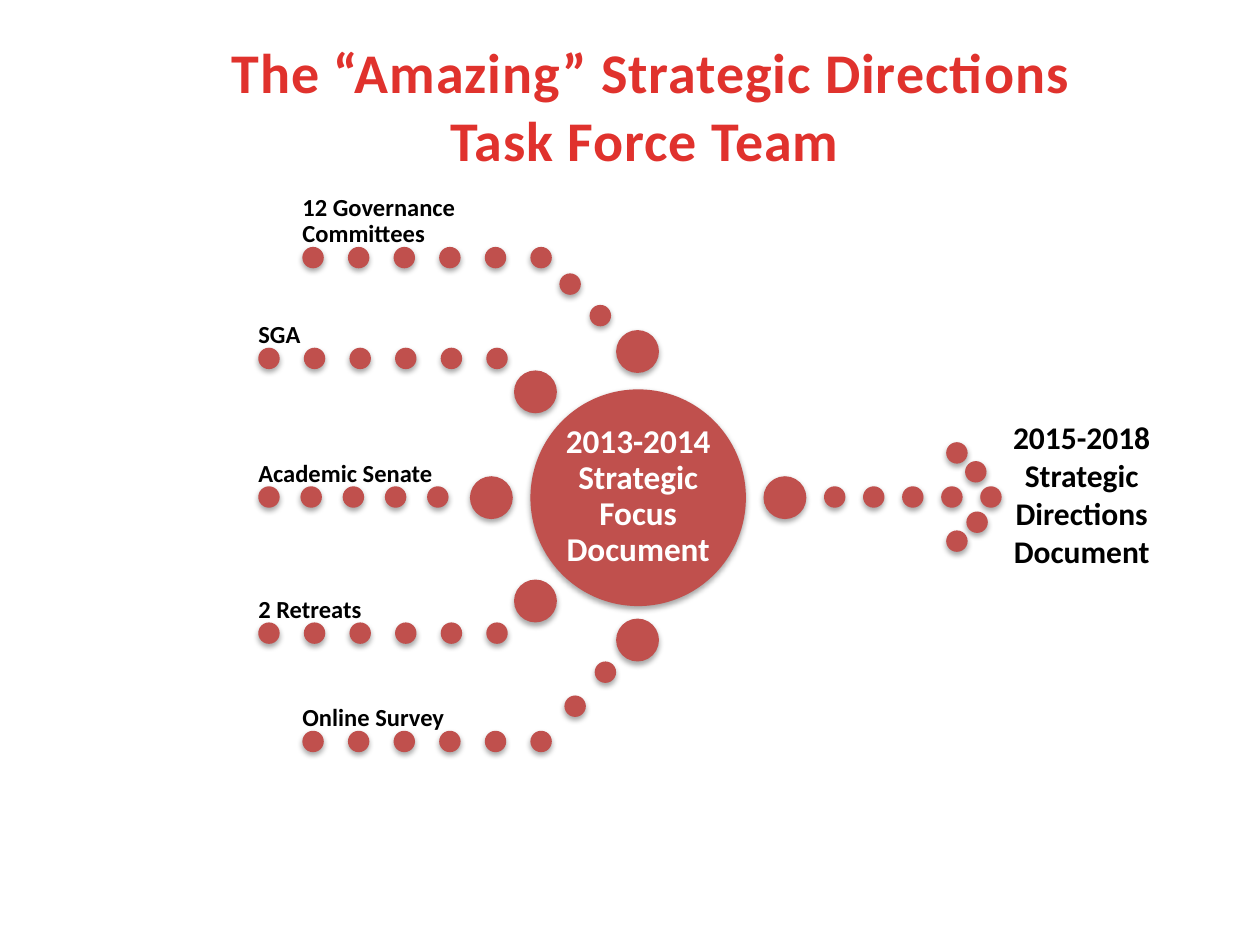
import pptx
import pptx.dml.color
import pptx.enum.shapes
import pptx.enum.text
import pptx.oxml
import pptx.oxml.ns
import pptx.util
from pptx.util import Inches

RED = pptx.dml.color.RGBColor(0xC0, 0x50, 0x4D)
TITLE_RED = pptx.dml.color.RGBColor(0xE0, 0x32, 0x2D)
BLACK = pptx.dml.color.RGBColor(0, 0, 0)
WHITE = pptx.dml.color.RGBColor(0xFF, 0xFF, 0xFF)
SMALL, LARGE = 0.17, 0.34
CENTER_ROW = 3.86
SHADOW = (
    f'<a:outerShdw {pptx.oxml.ns.nsdecls("a")} blurRad="40000" dist="23000" '
    'dir="5400000" rotWithShape="0"><a:srgbClr val="000000">'
    '<a:alpha val="35000"/></a:srgbClr></a:outerShdw>'
)

presentation = pptx.Presentation()
presentation.slide_width, presentation.slide_height = Inches(10), Inches(7.5)
slide = presentation.slides.add_slide(presentation.slide_layouts[5])


def add_circle(left, top, width, height):
    """Add a red circle with a soft shadow below it."""
    circle = slide.shapes.add_shape(
        pptx.enum.shapes.MSO_SHAPE.OVAL,
        Inches(left), Inches(top), Inches(width), Inches(height))
    circle.fill.solid()
    circle.fill.fore_color.rgb = RED
    circle.line.fill.background()
    circle.shadow.inherit = False
    effects = circle._element.spPr.find(pptx.oxml.ns.qn("a:effectLst"))
    effects.append(pptx.oxml.parse_xml(SHADOW))


def write_text(shape, text, box, size, color, alignment, anchor,
               margin=None, line_spacing=None):
    """Place a text shape at box, fill it with bold text and format it."""
    shape.left, shape.top, shape.width, shape.height = map(Inches, box)
    frame = shape.text_frame
    frame.text = text
    frame.word_wrap = True
    frame.auto_size = pptx.enum.text.MSO_AUTO_SIZE.NONE
    frame.vertical_anchor = anchor
    if margin is not None:
        frame.margin_left = frame.margin_right = Inches(margin)
        frame.margin_top = frame.margin_bottom = Inches(margin)
    paragraph = frame.paragraphs[0]
    paragraph.alignment = alignment
    paragraph.line_spacing = line_spacing
    font = paragraph.runs[0].font
    font.name, font.size, font.bold = "Calibri", pptx.util.Pt(size), True
    font.color.rgb = color


ALIGN = pptx.enum.text.PP_ALIGN
ANCHOR = pptx.enum.text.MSO_ANCHOR

# Title
title = slide.shapes.title
write_text(title, "The “Amazing” Strategic Directions Task Force Team ",
           (1.42, 0.25, 7.5, 1.18), 32, TITLE_RED, ALIGN.CENTER, ANCHOR.TOP)
title.text_frame.paragraphs[0].runs[0].font._element.set("spc", "50")

# Arrow from the central circle to the resulting document
for step in range(5):
    add_circle(6.54 + 0.31 * step, CENTER_ROW, SMALL, SMALL)
for left, top in [(7.51, 3.51), (7.66, 3.66), (7.67, 4.06), (7.51, 4.21)]:
    add_circle(left, top, SMALL, SMALL)
add_circle(6.06, 3.78, LARGE, LARGE)

# Central circle
add_circle(4.21, 3.09, 1.71, 1.72)
write_text(slide.shapes.add_textbox(0, 0, 0, 0),
           "2013-2014 Strategic Focus Document", (4.46, 3.34, 1.21, 1.21),
           19, WHITE, ALIGN.CENTER, ANCHOR.MIDDLE, 0.03, 0.9)

# Inputs: label, label width, row left and top, dot count, dot pitch,
# large dot, and the small dots that lead down or up to it
inputs = [
    ("12 Governance Committees", 1.99, 2.4, 1.96, 6, 0.362, (4.89, 2.62),
     [(4.44, 2.17), (4.68, 2.42)]),
    ("SGA", 1.99, 2.05, 2.76, 6, 0.362, (4.08, 2.94), []),
    ("Academic Senate", 1.5, 2.05, CENTER_ROW, 5, 0.335, (3.73, 3.78), []),
    ("2 Retreats", 1.99, 2.05, 4.94, 6, 0.362, (4.08, 4.6), []),
    ("Online Survey", 1.99, 2.4, 5.8, 6, 0.362, (4.89, 4.91),
     [(4.48, 5.52), (4.72, 5.25)]),
]
for label, width, left, top, count, pitch, large_dot, bend in inputs:
    row = [(left + pitch * step, top) for step in range(count)]
    for dot_left, dot_top in row + bend:
        add_circle(dot_left, dot_top, SMALL, SMALL)
    add_circle(*large_dot, LARGE, LARGE)
    write_text(slide.shapes.add_textbox(0, 0, 0, 0), label,
               (left, top - 0.43, width, 0.44), 14, BLACK,
               ALIGN.LEFT, ANCHOR.BOTTOM, 0, 0.9)

# Result
write_text(slide.shapes.add_textbox(0, 0, 0, 0),
           "2015-2018 Strategic Directions Document",
           (7.75, 3.27, 1.67, 1.31), 18, BLACK, ALIGN.CENTER, ANCHOR.TOP)

presentation.save("out.pptx")
